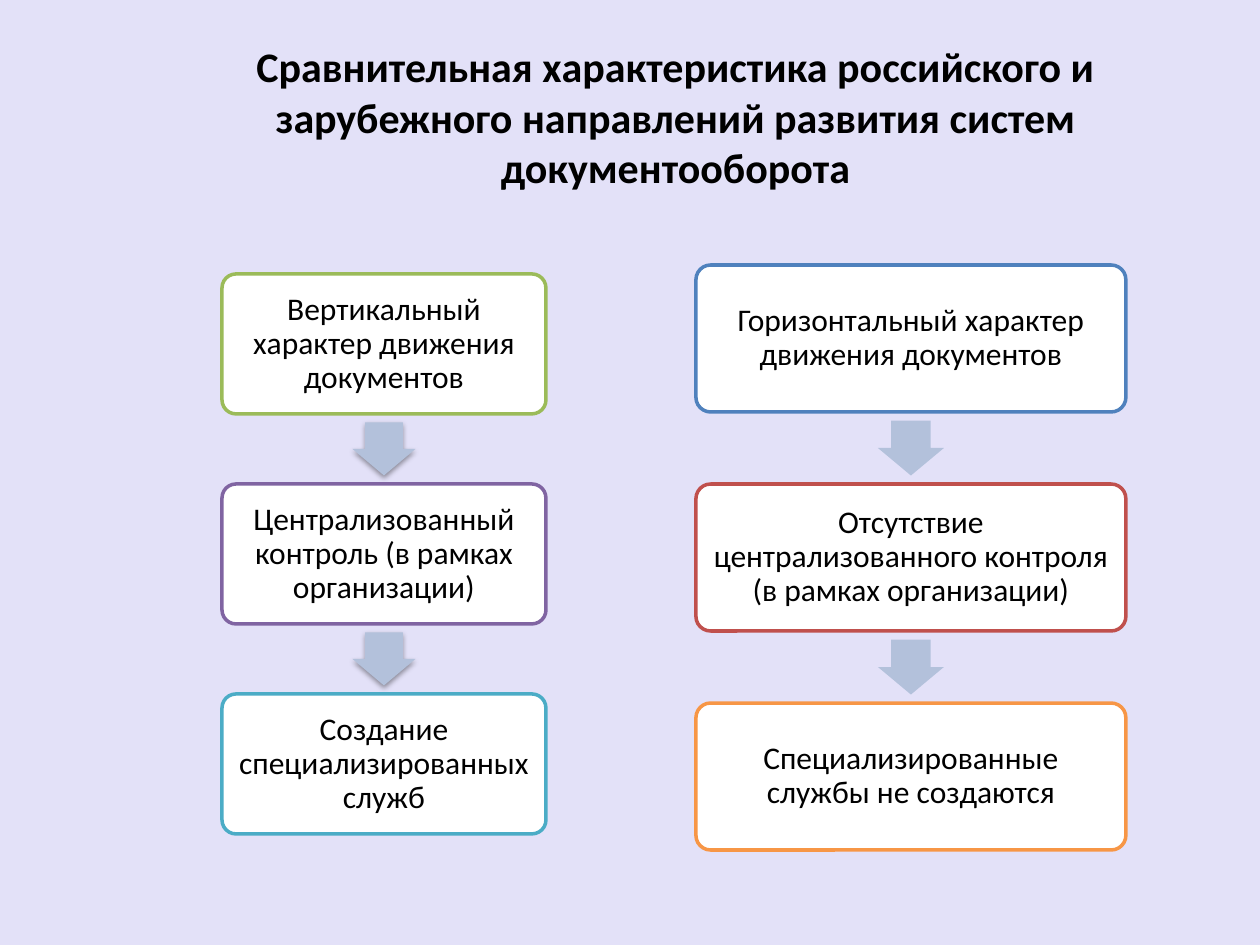
from lxml import etree
from pptx import Presentation
from pptx import util as u
from pptx.dml.color import RGBColor
from pptx.enum import shapes, text
from pptx.oxml.ns import qn

PX = u.Inches(1) / 126
FONT = "Calibri"
COLORS = {
    "page": "E3E1F8", "text": "000000", "box": "FFFFFF", "arrow": "B3C1DB",
    "green": "9BBB59", "purple": "8064A2", "teal": "4BACC6",
    "blue": "4F81BD", "red": "C0504D", "orange": "F79646",
}
TITLE = ("Сравнительная характеристика российского и зарубежного "
         "направлений развития систем документооборота")
COLUMNS = [
    dict(left=222, top=274, width=324, height=140, gap=70, arrow=(63, 53), shadow=True,
         steps=[("Вертикальный характер движения документов", "green"),
                ("Централизованный контроль (в рамках организации)", "purple"),
                ("Создание специализированных служб", "teal")]),
    dict(left=696, top=265, width=430, height=147, gap=72, arrow=(66, 55), shadow=False,
         steps=[("Горизонтальный характер движения документов", "blue"),
                ("Отсутствие централизованного контроля (в рамках организации)", "red"),
                ("Специализированные службы не создаются", "orange")]),
]


def px(*lengths):
    return [u.Emu(round(length * PX)) for length in lengths]


def rgb(name):
    return RGBColor.from_string(COLORS[name])


def write(shape, words, size=18, bold=False, spacing=None, inset=13, indent=0):
    """Fill a shape with one centred paragraph."""
    frame = shape.text_frame
    frame.word_wrap = True
    frame.vertical_anchor = text.MSO_ANCHOR.MIDDLE
    for side in ("left", "top", "right", "bottom"):
        setattr(frame, f"margin_{side}", px(inset)[0])
    para = frame.paragraphs[0]
    para.alignment = text.PP_ALIGN.CENTER
    para.line_spacing = spacing
    if indent:
        para._p.get_or_add_pPr().set("marL", str(px(indent)[0]))
    span = para.add_run()
    span.text = words
    span.font.name = FONT
    span.font.size = u.Pt(size)
    span.font.bold = bold
    span.font.color.rgb = rgb("text")


def add_title(page):
    box = page.shapes.add_textbox(*px(64, 34, 1160, 165))
    write(box, TITLE, size=24, bold=True, indent=63)


def add_filled(group, kind, place, fill):
    shape = group.shapes.add_shape(kind, *px(*place))
    shape.shadow.inherit = False
    shape.fill.solid()
    shape.fill.fore_color.rgb = rgb(fill)
    return shape


def add_step(group, place, words, outline):
    box = add_filled(group, shapes.MSO_SHAPE.ROUNDED_RECTANGLE, place, "box")
    box.adjustments[0] = 0.1
    box.line.color.rgb = rgb(outline)
    box.line.width = u.Pt(2)
    write(box, words, spacing=0.9)


def add_arrow(group, place, shadow):
    arrow = add_filled(group, shapes.MSO_SHAPE.DOWN_ARROW, place, "arrow")
    arrow.adjustments[0] = 0.6
    arrow.adjustments[1] = 0.5
    arrow.line.fill.background()
    if shadow:
        add_shadow(arrow)


def add_shadow(shape):
    effects = shape._element.spPr.find(qn("a:effectLst"))
    outer = etree.SubElement(effects, qn("a:outerShdw"), blurRad=str(u.Pt(3.1)),
                             dist=str(u.Pt(1.6)), dir="5400000", rotWithShape="0")
    color = etree.SubElement(outer, qn("a:srgbClr"), val=COLORS["text"])
    etree.SubElement(color, qn("a:alpha"), val="38000")


def add_column(page, left, top, width, height, gap, arrow, shadow, steps):
    """Stack the steps, with an arrow centred in each gap."""
    group = page.shapes.add_group_shape()
    arrow_width, arrow_height = arrow
    for index, (words, outline) in enumerate(steps):
        y = top + index * (height + gap)
        if index:
            place = (left + (width - arrow_width) / 2,
                     y - (gap + arrow_height) / 2, arrow_width, arrow_height)
            add_arrow(group, place, shadow)
        add_step(group, (left, y, width, height), words, outline)


def main():
    deck = Presentation()
    deck.slide_width, deck.slide_height = px(1260, 945)
    page = deck.slides.add_slide(deck.slide_layouts[6])
    page.background.fill.solid()
    page.background.fill.fore_color.rgb = rgb("page")
    add_title(page)
    for column in COLUMNS:
        add_column(page, **column)
    deck.save("out.pptx")


if __name__ == "__main__":
    main()
